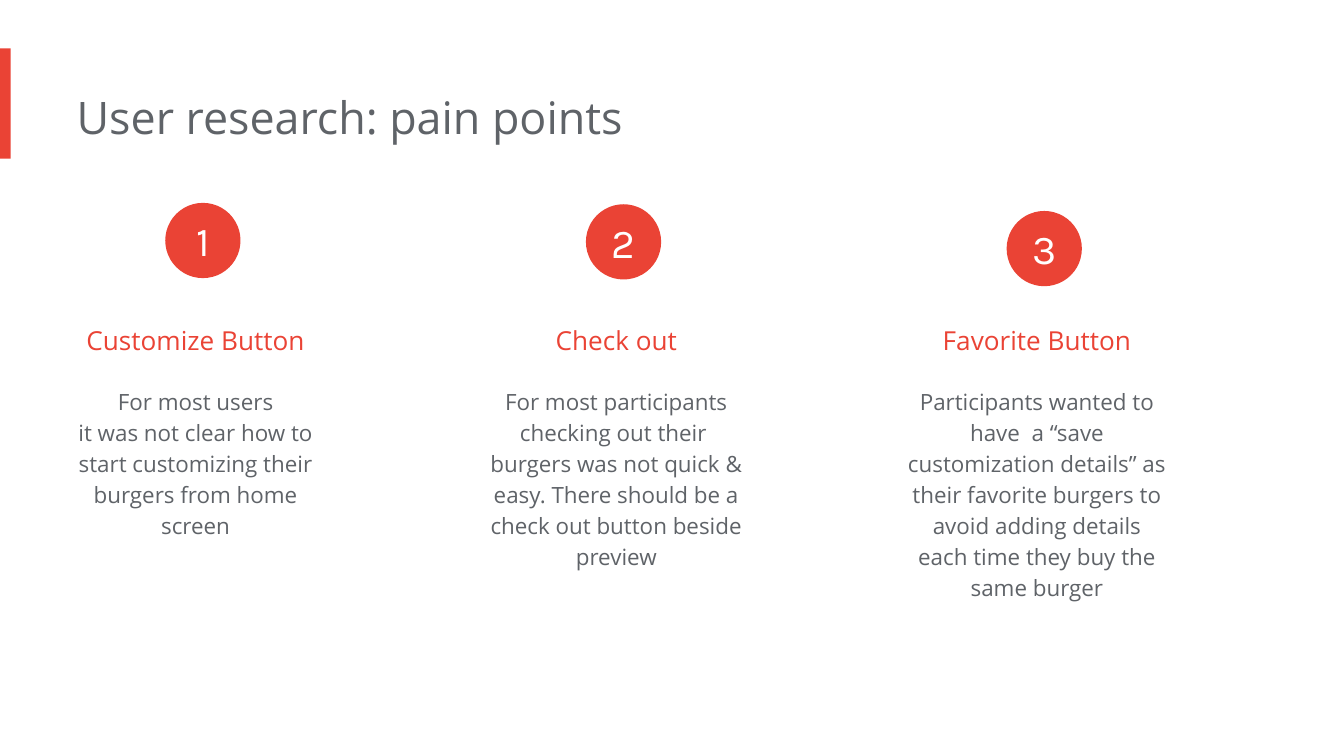
from pptx import Presentation
from pptx import util as u
from pptx.dml.color import RGBColor
from pptx.enum import shapes, text

RED, GRAY, WHITE = "EA4335", "5F6368", "FFFFFF"
BODY_FONT, NUMBER_FONT = "Open Sans", "Karla"
SLIDE_WIDTH = 10
SLIDE_HEIGHT = SLIDE_WIDTH * 9 / 16
COLUMN_LEFT, COLUMN_STEP, COLUMN_WIDTH = 0.48, 3.13, 2.05
HEADING_TOP, HEADING_HEIGHT = 2.2, 0.56
BADGE_SIZE, BADGE_INDENT = 0.56, 0.75

# Badge top, heading, paragraphs, height of the description
PAIN_POINTS = [
    (1.51, "Customize Button",
     ["For most users", "it was not clear how to", "start customizing their",
      "burgers from home screen"], 1.36),
    (1.52, "Check out",
     ["For most participants", "checking out their ",
      "burgers was not quick & easy. There should be a check out button beside preview"], 1.6),
    (1.57, "Favorite Button",
     ["Participants wanted to have  a “save customization details” as their favorite "
      "burgers to avoid adding details each time they buy the same burger"], 1.83),
]


def color(hex_string):
    return RGBColor.from_string(hex_string)


def inches(*box):
    return [u.Inches(length) for length in box]


def write(shape, lines, size, hex_color, font=BODY_FONT, align=text.PP_ALIGN.CENTER,
          spacing=1.0, insets=(0, 0.1, 0.1, 0.1), anchor=text.MSO_ANCHOR.TOP):
    """Fill a shape with paragraphs that share one format."""
    frame = shape.text_frame
    frame.text = "\n".join(lines)
    frame.word_wrap = True
    frame.auto_size = text.MSO_AUTO_SIZE.NONE
    frame.vertical_anchor = anchor
    (frame.margin_left, frame.margin_top,
     frame.margin_right, frame.margin_bottom) = inches(*insets)
    for paragraph in frame.paragraphs:
        paragraph.alignment = align
        paragraph.line_spacing = spacing
        paragraph.space_before = u.Pt(0)
        for run in paragraph.runs:
            run.font.name = font
            run.font.size = u.Pt(size)
            run.font.color.rgb = color(hex_color)


def add_red_shape(slide, kind, box):
    shape = slide.shapes.add_shape(kind, *inches(*box))
    shape.shadow.inherit = False
    shape.fill.solid()
    shape.fill.fore_color.rgb = color(RED)
    shape.line.fill.background()
    return shape


def add_header(slide, title):
    add_red_shape(slide, shapes.MSO_SHAPE.RECTANGLE, (0, 0.36, 0.08, 0.82))
    heading = slide.shapes.title
    heading.left, heading.top, heading.width, heading.height = inches(0.57, 0.57, 6.73, 0.61)
    write(heading, [title], 24, GRAY, align=text.PP_ALIGN.LEFT)


def add_pain_point(slide, number, left, badge_top, heading, description, height):
    badge = add_red_shape(slide, shapes.MSO_SHAPE.OVAL,
                          (left + BADGE_INDENT, badge_top, BADGE_SIZE, BADGE_SIZE))
    write(badge, [str(number)], 22, WHITE, NUMBER_FONT,
          insets=(0, 0, 0, 0), anchor=text.MSO_ANCHOR.MIDDLE)

    heading_box = slide.shapes.add_textbox(
        *inches(left, HEADING_TOP, COLUMN_WIDTH, HEADING_HEIGHT))
    write(heading_box, [heading], 14, RED, spacing=1.5)

    description_box = slide.shapes.add_textbox(
        *inches(left, HEADING_TOP + HEADING_HEIGHT, COLUMN_WIDTH, height))
    write(description_box, description, 12, GRAY, spacing=1.15)


def main():
    deck = Presentation()
    deck.slide_width, deck.slide_height = inches(SLIDE_WIDTH, SLIDE_HEIGHT)
    slide = deck.slides.add_slide(deck.slide_layouts.get_by_name("Title Only"))
    slide.background.fill.solid()
    slide.background.fill.fore_color.rgb = color(WHITE)

    add_header(slide, "User research: pain points")
    for index, pain_point in enumerate(PAIN_POINTS):
        add_pain_point(slide, index + 1, COLUMN_LEFT + index * COLUMN_STEP, *pain_point)
    deck.save("out.pptx")


if __name__ == "__main__":
    main()
